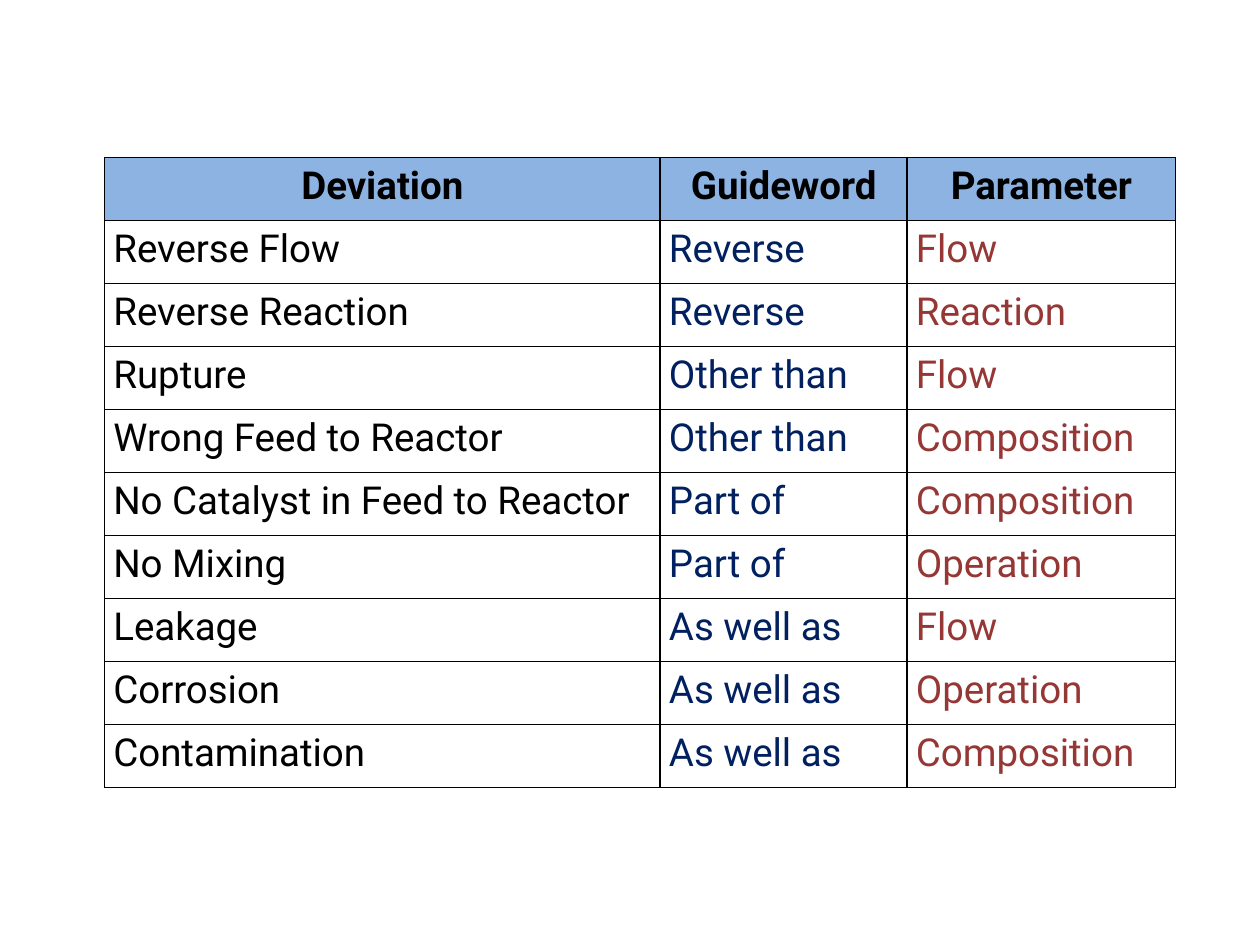
from lxml.etree import SubElement
from pptx import Presentation
from pptx.dml.color import RGBColor
from pptx.enum.text import PP_ALIGN
from pptx.oxml.ns import qn
from pptx.util import Inches, Pt

FONT = "Roboto"
BLACK, NAVY, RED, HEADER_BLUE = "000000", "002060", "953735", "8DB3E2"
COLUMN_WIDTHS = (4.41, 1.96, 2.13)
COLUMN_COLORS = (BLACK, NAVY, RED)
ROW_HEIGHT = 0.5
LEFT, TOP = 0.83, 1.25

ROWS = [
    ("Deviation", "Guideword", "Parameter"),
    ("Reverse Flow", "Reverse", "Flow"),
    ("Reverse Reaction", "Reverse", "Reaction"),
    ("Rupture", "Other than", "Flow"),
    ("Wrong Feed to Reactor", "Other than", "Composition"),
    ("No Catalyst in Feed to Reactor", "Part of", "Composition"),
    ("No Mixing", "Part of", "Operation"),
    ("Leakage", "As well as", "Flow"),
    ("Corrosion", "As well as", "Operation"),
    ("Contamination", "As well as", "Composition"),
]


def rgb(value):
    return RGBColor.from_string(value)


def add_borders(cell, color=BLACK, width=1):
    """Draw all four edges; call before the fill, which must follow in the XML."""
    tc_pr = cell._tc.get_or_add_tcPr()
    for edge in ("lnL", "lnR", "lnT", "lnB"):
        line = SubElement(tc_pr, qn(f"a:{edge}"), w=str(Pt(width)))
        fill = SubElement(line, qn("a:solidFill"))
        SubElement(fill, qn("a:srgbClr"), val=color)


def fill_cell(cell, text, color, header):
    add_borders(cell)
    cell.margin_left = cell.margin_right = Inches(0.07)
    cell.margin_top = cell.margin_bottom = 0
    if header:
        cell.fill.solid()
        cell.fill.fore_color.rgb = rgb(HEADER_BLUE)
    else:
        cell.fill.background()

    p = cell.text_frame.paragraphs[0]
    p.text = text
    p.alignment = PP_ALIGN.CENTER if header else PP_ALIGN.LEFT
    p.line_spacing = 1.15
    p.font.name = FONT
    p.font.size = Pt(22)
    p.font.bold = header
    p.font.color.rgb = rgb(color)


def add_deviation_table(s):
    table = s.shapes.add_table(
        len(ROWS), len(COLUMN_WIDTHS), Inches(LEFT), Inches(TOP),
        Inches(sum(COLUMN_WIDTHS)), Inches(ROW_HEIGHT * len(ROWS))).table
    table.horz_banding = False
    for column, width in zip(table.columns, COLUMN_WIDTHS):
        column.width = Inches(width)
    for i, row in enumerate(ROWS):
        for j, text in enumerate(row):
            header = i == 0
            color = BLACK if header else COLUMN_COLORS[j]
            fill_cell(table.cell(i, j), text, color, header)


def main():
    prs = Presentation()
    prs.slide_width, prs.slide_height = Inches(10), Inches(7.5)
    s = prs.slides.add_slide(prs.slide_layouts[6])
    add_deviation_table(s)
    prs.save("out.pptx")


if __name__ == "__main__":
    main()
